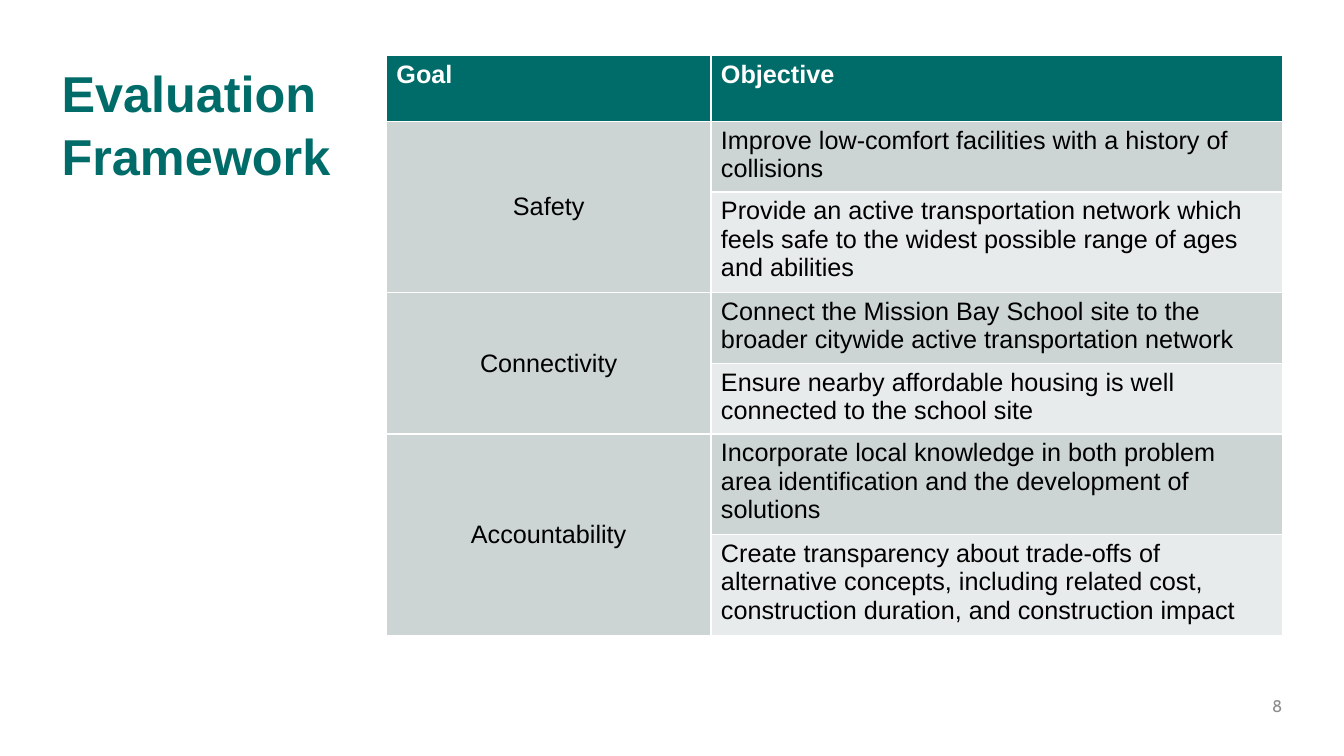
from pptx import Presentation
from pptx.dml.color import RGBColor
from pptx.enum.text import MSO_ANCHOR as ANCHOR, PP_ALIGN as ALIGN
from pptx.util import Pt

# Content
TITLE = "Evaluation Framework"
PAGE = "8"
HEADERS = ["Goal", "Objective"]
GOALS = [
    ("Safety", [
        "Improve low-comfort facilities with a history of collisions",
        "Provide an active transportation network which feels safe to the "
        "widest possible range of ages and abilities",
    ]),
    ("Connectivity", [
        "Connect the Mission Bay School site to the broader citywide active "
        "transportation network",
        "Ensure nearby affordable housing is well connected to the school site",
    ]),
    ("Accountability", [
        "Incorporate local knowledge in both problem area identification and "
        "the development of solutions",
        "Create transparency about trade-offs of alternative concepts, "
        "including related cost, construction duration, and construction impact",
    ]),
]

# Style
TEAL = RGBColor(0x00, 0x6C, 0x69)
BAND_DARK = RGBColor(0xCC, 0xD4, 0xD4)
BAND_LIGHT = RGBColor(0xE7, 0xEB, 0xEB)
WHITE = RGBColor(0xFF, 0xFF, 0xFF)
BLACK = RGBColor(0x00, 0x00, 0x00)
GRAY = RGBColor(0x8C, 0x8C, 0x8C)
COL_WIDTHS = [231.8, 408.4]
ROW_HEIGHT = 47.1
TOP = 39.6


def add_run(p, text, size, color, bold=False, font="Arial"):
    r = p.add_run()
    r.text = text
    r.font.name, r.font.size, r.font.bold = font, Pt(size), bold
    r.font.color.rgb = color


def add_box(s, left, top, width, height, anchor):
    tf = s.shapes.add_textbox(Pt(left), Pt(top), Pt(width), Pt(height)).text_frame
    tf.word_wrap = True
    tf.vertical_anchor = anchor
    tf.margin_left = tf.margin_top = tf.margin_right = tf.margin_bottom = 0
    return tf.paragraphs[0]


def fill_cell(cell, text, fill, color=BLACK, bold=False):
    cell.fill.solid()
    cell.fill.fore_color.rgb = fill
    add_run(cell.text_frame.paragraphs[0], text, 18, color, bold)


prs = Presentation()
prs.slide_width, prs.slide_height = Pt(960), Pt(540)
s = prs.slides.add_slide(prs.slide_layouts[6])

# Title
p = add_box(s, 44, TOP + 3, 270, 427, ANCHOR.TOP)
p.space_after = Pt(16)
p.line_spacing = 1.04
add_run(p, TITLE, 36, TEAL, bold=True)

# Goals table
row_count = 1 + sum(len(objectives) for _, objectives in GOALS)
table = s.shapes.add_table(row_count, len(HEADERS), Pt(276), Pt(TOP),
                           Pt(sum(COL_WIDTHS)), Pt(row_count * ROW_HEIGHT)).table
for column, width in zip(table.columns, COL_WIDTHS):
    column.width = Pt(width)
for row in table.rows:
    row.height = Pt(ROW_HEIGHT)
for col, header in enumerate(HEADERS):
    fill_cell(table.cell(0, col), header, TEAL, WHITE, bold=True)

# Each goal spans the rows of its objectives
first = 1
for goal, objectives in GOALS:
    last = first + len(objectives) - 1
    goal_cell = table.cell(first, 0)
    goal_cell.merge(table.cell(last, 0))
    fill_cell(goal_cell, goal, BAND_DARK)
    goal_cell.vertical_anchor = ANCHOR.MIDDLE
    goal_cell.text_frame.paragraphs[0].alignment = ALIGN.CENTER
    for row, objective in enumerate(objectives, first):
        fill_cell(table.cell(row, 1), objective, BAND_DARK if row % 2 else BAND_LIGHT)
    first = last + 1

# Slide number
p = add_box(s, 700, 490, 216, 28.8, ANCHOR.MIDDLE)
p.alignment = ALIGN.RIGHT
add_run(p, PAGE, 12, GRAY, font="Cabin")

prs.save("out.pptx")
